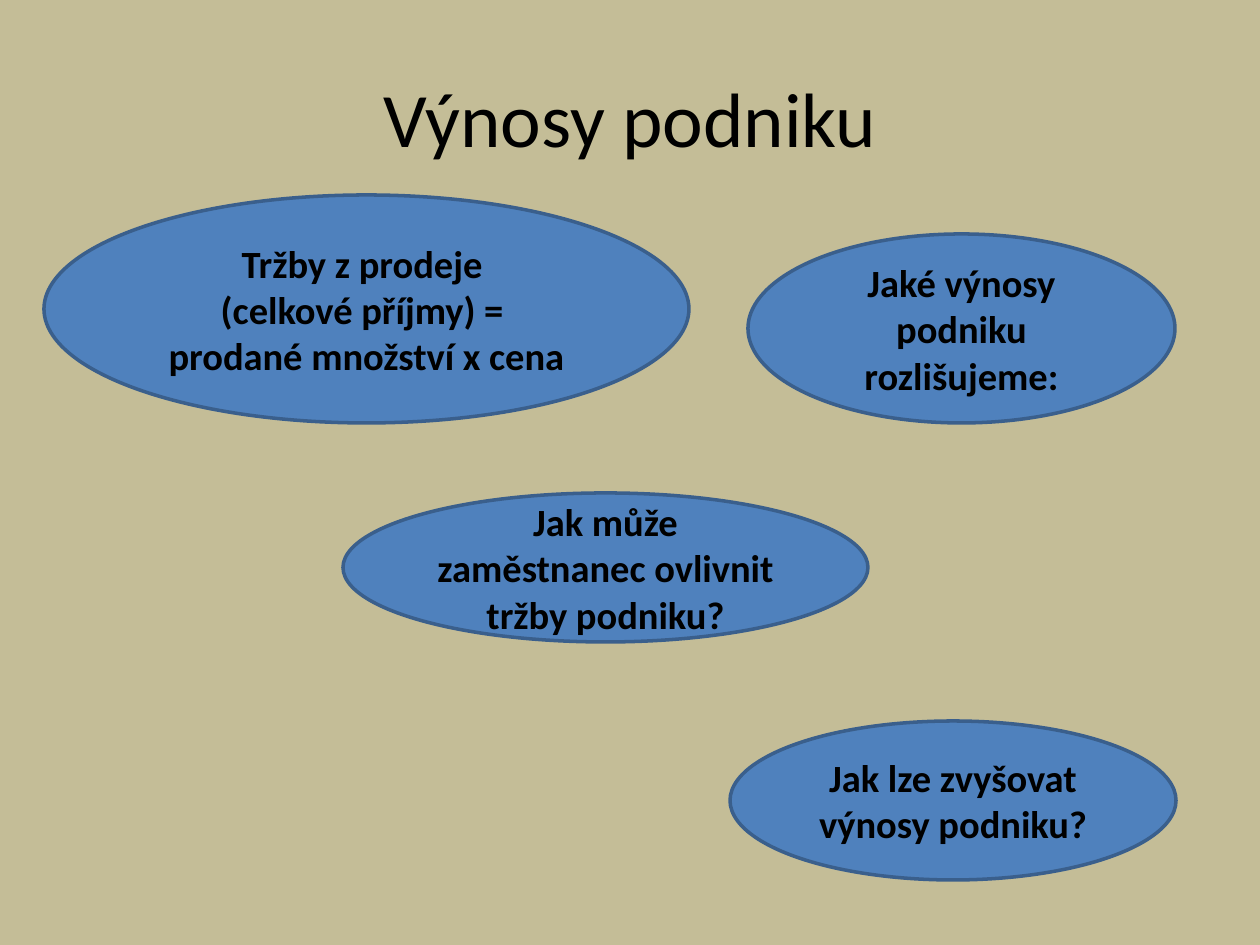
"""Build the slide on company revenues with a title and four ellipses."""
from pptx import Presentation
from pptx import util as u
from pptx.dml.color import RGBColor
from pptx.enum import shapes, text

PX = 914400 / 126
BACKGROUND = RGBColor(0xC4, 0xBD, 0x97)
BLUE = RGBColor(0x4F, 0x81, 0xBD)
OUTLINE = RGBColor(0x3A, 0x5F, 0x8C)
BLACK = RGBColor(0, 0, 0)


def box(*lengths):
    return [u.Emu(round(n * PX)) for n in lengths]


def write(sp, lines, size, bold):
    tf = sp.text_frame
    tf.word_wrap = True
    tf.vertical_anchor = text.MSO_ANCHOR.MIDDLE
    for i, line in enumerate(lines):
        p = tf.add_paragraph() if i else tf.paragraphs[0]
        p.alignment = text.PP_ALIGN.CENTER
        r = p.add_run()
        r.text = line
        r.font.name = "Calibri"
        r.font.size = u.Pt(size)
        r.font.bold = bold
        r.font.color.rgb = BLACK


prs = Presentation()
prs.slide_width, prs.slide_height = box(1260, 945)
s = prs.slides.add_slide(prs.slide_layouts[6])
s.background.fill.solid()
s.background.fill.fore_color.rgb = BACKGROUND

title = s.shapes.add_textbox(*box(63, 38, 1134, 158))
write(title, ["Výnosy podniku"], 44, False)

ellipses = [
    ((44, 195, 645, 228), ["Tržby z prodeje ", "(celkové příjmy) = ", "prodané množství x cena"]),
    ((748, 234, 427, 189), ["Jaké výnosy podniku rozlišujeme:"]),
    ((343, 493, 525, 149), ["Jak může zaměstnanec ovlivnit tržby podniku?"]),
    ((730, 721, 446, 159), ["Jak lze zvyšovat výnosy podniku?"]),
]
for place, lines in ellipses:
    sp = s.shapes.add_shape(shapes.MSO_SHAPE.OVAL, *box(*place))
    sp.shadow.inherit = False
    sp.fill.solid()
    sp.fill.fore_color.rgb = BLUE
    sp.line.color.rgb = OUTLINE
    sp.line.width = u.Pt(2)
    write(sp, lines, 22, True)

prs.save("out.pptx")
